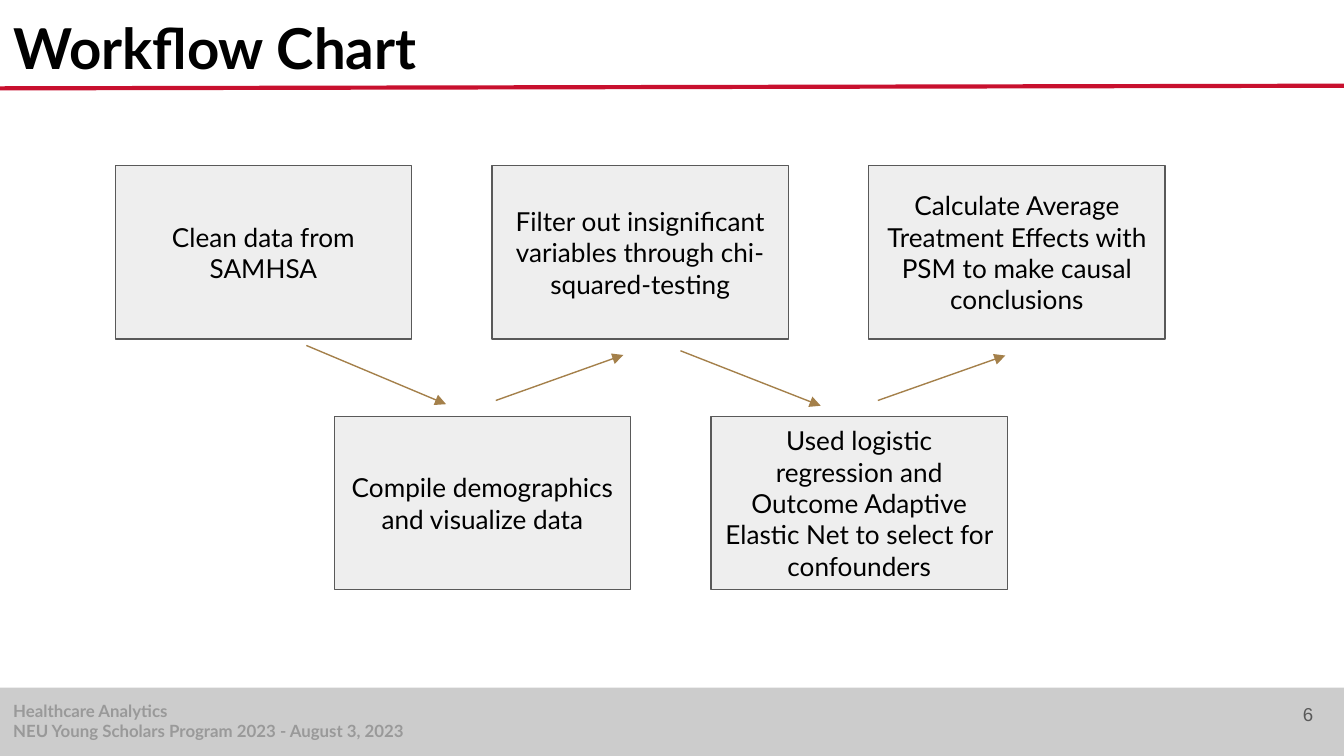
from lxml import etree
from pptx import Presentation, util as u
from pptx.dml import color
from pptx.enum import shapes, text
from pptx.oxml import ns

COLORS = {
    "black": "000000", "box": "EEEEEE", "outline": "595959", "rule": "C8102E",
    "band": "CCCCCC", "footer": "999999", "arrow": "A4804A",
}


def write(shape, lines, size, tint, align, anchor, font="Lato", bold=False):
    frame = shape.text_frame
    frame.word_wrap = True
    frame.auto_size = text.MSO_AUTO_SIZE.NONE
    frame.vertical_anchor = anchor
    frame.margin_left = frame.margin_right = u.Cm(0.25)
    frame.margin_top = frame.margin_bottom = u.Cm(0.25)
    for index, line in enumerate(lines):
        para = frame.add_paragraph() if index else frame.paragraphs[0]
        para.alignment = align
        span = para.add_run()
        span.text = line
        span.font.name = font
        span.font.size = u.Pt(size)
        span.font.bold = bold
        span.font.color.rgb = color.RGBColor.from_string(COLORS[tint])


def connect(page, points, tint, width):
    line = page.shapes.add_connector(
        shapes.MSO_CONNECTOR.STRAIGHT, *[u.Cm(value) for value in points])
    line.line.color.rgb = color.RGBColor.from_string(COLORS[tint])
    line.line.width = u.Pt(width)
    etree.SubElement(line._element.spPr, ns.qn("a:effectLst"))
    return line


deck = Presentation()
deck.slide_width = u.Cm(25.4)
deck.slide_height = u.Cm(14.29)
page = deck.slides.add_slide(deck.slide_layouts[5])

title = page.shapes.title
title.left, title.top, title.width, title.height = u.Cm(0), u.Cm(0), u.Cm(23.67), u.Cm(1.6)
write(title, ["Workflow Chart"], 30.2, "black",
      text.PP_ALIGN.LEFT, text.MSO_ANCHOR.TOP, bold=True)

steps = [
    "Clean data from SAMHSA",
    "Compile demographics and visualize data",
    "Filter out insignificant variables through chi-squared-testing",
    "Used logistic regression and Outcome Adaptive Elastic Net to select for confounders",
    "Calculate Average Treatment Effects with PSM to make causal conclusions",
]
row_left = [2.18, 6.32]
row_top = [3.13, 7.87]
pitch = 7.12
for index, step in enumerate(steps):
    column, row = divmod(index, 2)
    box = page.shapes.add_shape(
        shapes.MSO_SHAPE.RECTANGLE, u.Cm(row_left[row] + column * pitch),
        u.Cm(row_top[row]), u.Cm(5.6), u.Cm(3.28))
    box.shadow.inherit = False
    box.fill.solid()
    box.fill.fore_color.rgb = color.RGBColor.from_string(COLORS["box"])
    box.line.color.rgb = color.RGBColor.from_string(COLORS["outline"])
    box.line.width = u.Pt(0.75)
    write(box, [step], 14, "black", text.PP_ALIGN.CENTER, text.MSO_ANCHOR.MIDDLE)

connect(page, (-0.03, 1.67, 25.43, 1.62), "rule", 2.25)

footer = page.shapes.add_shape(
    shapes.MSO_SHAPE.RECTANGLE, u.Cm(0), u.Cm(13), u.Cm(25.4), u.Cm(1.29))
footer.shadow.inherit = False
footer.fill.solid()
footer.fill.fore_color.rgb = color.RGBColor.from_string(COLORS["band"])
footer.line.fill.background()
write(footer, ["Healthcare Analytics", "NEU Young Scholars Program 2023 - August 3, 2023"],
      9, "footer", text.PP_ALIGN.LEFT, text.MSO_ANCHOR.TOP, bold=True)

arrows = [
    (5.79, 6.53, 8.43, 7.64),
    (9.37, 7.57, 11.78, 6.71),
    (12.86, 6.63, 15.51, 7.67),
    (16.59, 7.57, 19, 6.72),
]
for points in arrows:
    arrow = connect(page, points, "arrow", 0.75)
    etree.SubElement(arrow.line._get_or_add_ln(), ns.qn("a:tailEnd"),
                     type="triangle", w="med", len="med")

number = page.shapes.add_textbox(u.Cm(23.55), u.Cm(12.95), u.Cm(1.52), u.Cm(1.09))
write(number, ["6"], 10, "outline", text.PP_ALIGN.RIGHT, text.MSO_ANCHOR.MIDDLE, font="Arial")

deck.save("out.pptx")
